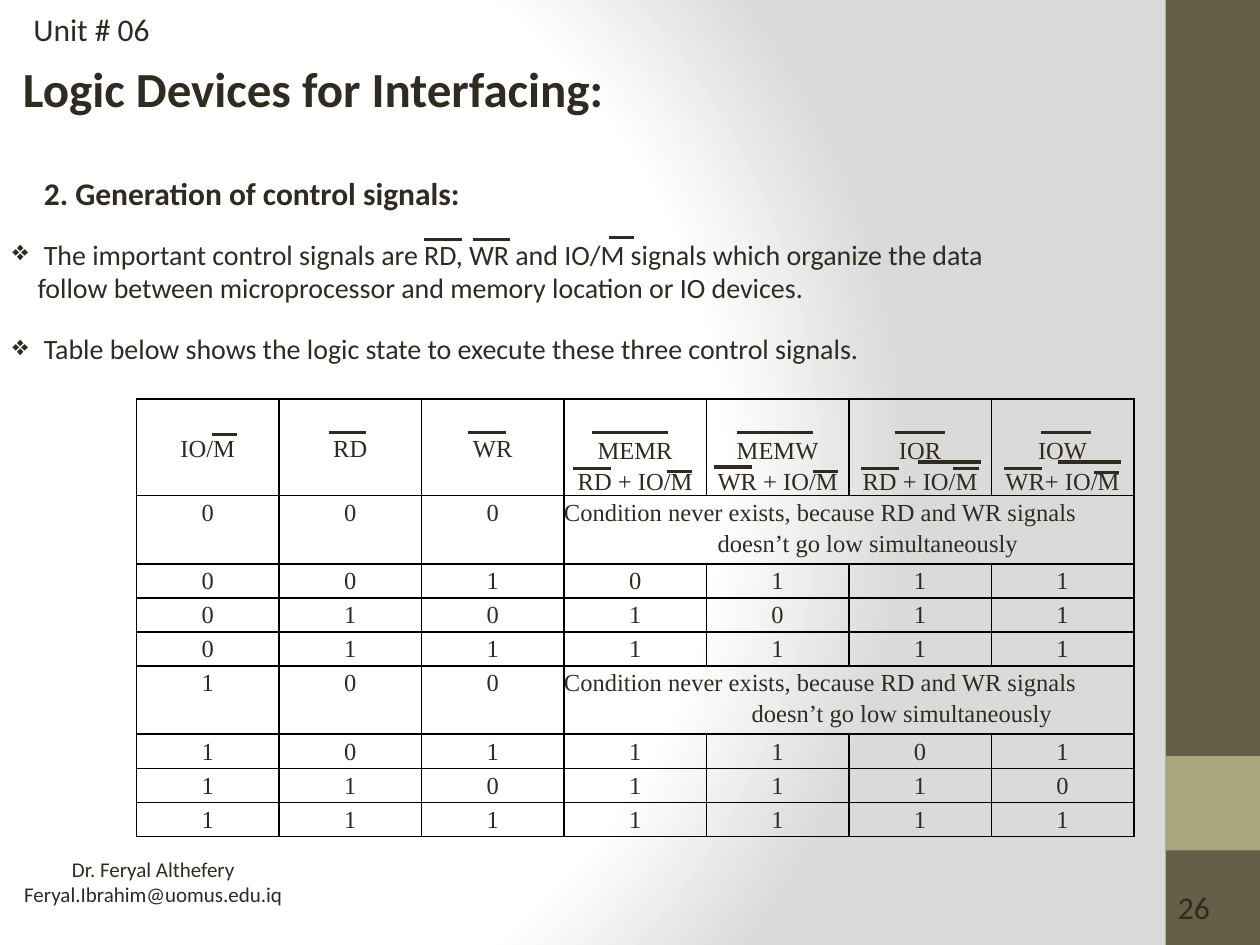
from lxml.etree import SubElement
from pptx import Presentation
from pptx.dml.color import RGBColor
from pptx.enum.shapes import MSO_CONNECTOR as Connector, MSO_SHAPE as Shape
from pptx.enum.text import MSO_ANCHOR as Anchor, PP_ALIGN as Align
from pptx.oxml import parse_xml
from pptx.oxml.ns import nsdecls, qn
from pptx.util import Inches, Pt

COLORS = {"ink": "2F2B20", "side": "675E47", "accent": "A9A57C",
          "border": "000000", "light": "FFFFFF", "shade": "DADADA"}
WIDTH, HEIGHT = Inches(10), Inches(7.5)
COLUMNS, ROWS = 120, 90

SIGNALS = ["IO/M", "RD", "WR", "MEMR\nRD + IO/M", "MEMW\nWR + IO/M",
           "IOR\nRD + IO/M", "IOW\nWR+ IO/M"]
LOGIC = ["000", "0010111", "0101011", "0111111",
         "100", "1011101", "1101110", "1111111"]
CONDITION = ["Condition never exists, because RD and WR signals",
             "doesn’t go low simultaneously"]
CONDITION_INDENTS = {1: 1.22, 5: 1.49}

OVERBARS = {
    2.4: [(58, 22.6), (20.2, 41.4), (63.5, 44.9), (77.4, 44.9), (90.8, 44.6), (104.2, 45)],
    3.6: [(40.4, 22.8), (45, 22.8), (31.3, 41.2), (44.6, 41.2),
          (54.6, 44.6), (68, 44.5), (82, 44.6), (95.6, 44.6)],
    4.8: [(85.2, 41.2), (99.1, 41.2)],
    6: [(87.4, 44), (100.8, 44)],
    7.2: [(56.4, 41.2), (70.2, 41.2)],
}


def across(columns):
    return round(WIDTH * columns / COLUMNS)


def down(rows):
    return round(HEIGHT * rows / ROWS)


def color(name):
    return RGBColor.from_string(COLORS[name])


def write_text(paragraph, text, size=14, font="Calibri", bold=False,
               align=Align.LEFT, spacing=None, indent=0, bullet=None):
    properties = paragraph._p.get_or_add_pPr()
    if indent:
        properties.set("marL", str(Inches(indent)))
    if bullet:
        properties.set("indent", str(-Inches(indent)))
        SubElement(properties, qn("a:buChar")).set("char", bullet)
    paragraph.alignment = align
    if spacing:
        paragraph.line_spacing = spacing
    run = paragraph.add_run()
    run.text = text
    run.font.name, run.font.size, run.font.bold = font, Pt(size), bold
    run.font.color.rgb = color("ink")


def next_paragraph(frame, index):
    return frame.add_paragraph() if index else frame.paragraphs[0]


def add_text(slide, box, lines, wrap=True, indents=(0,), bullet=None, **style):
    left, top, width, height = box
    frame = slide.shapes.add_textbox(across(left), down(top), across(width), down(height)).text_frame
    frame.word_wrap = wrap
    for index, line in enumerate(lines):
        write_text(next_paragraph(frame, index), line, indent=indents[index % len(indents)],
                   bullet=None if index else bullet, **style)


def add_panel(slide, top, height, fill):
    panel = slide.shapes.add_shape(Shape.RECTANGLE, across(111), down(top), across(9), down(height))
    panel.shadow.inherit = False
    panel.fill.solid()
    panel.fill.fore_color.rgb = color(fill)
    panel.line.fill.background()


def add_overbar(slide, left, top, length):
    bar = slide.shapes.add_connector(Connector.STRAIGHT, across(left), down(top),
                                     across(left + length), down(top))
    bar.line.color.rgb = color("ink")
    bar.line.width = Pt(2)
    SubElement(bar._element.spPr, qn("a:effectLst"))


def set_background(slide):
    slide.background.fill.gradient()
    gradient = next(slide.element.iter(qn("a:gradFill")))
    stops = "".join(
        f'<a:gs pos="{position}"><a:srgbClr val="{COLORS[name]}"/></a:gs>'
        for position, name in [(0, "light"), (75000, "light"), (100000, "shade")])
    gradient.getparent().replace(gradient, parse_xml(
        f'<a:gradFill {nsdecls("a")} rotWithShape="1"><a:gsLst>{stops}</a:gsLst><a:path path="circle">'
        '<a:fillToRect l="20000" t="50000" r="100000" b="50000"/></a:path></a:gradFill>'))


def format_cell(cell):
    cell.margin_left = cell.margin_right = cell.margin_top = cell.margin_bottom = 0
    cell.fill.background()
    properties = cell._tc.get_or_add_tcPr()
    for index, side in enumerate(["lnL", "lnR", "lnT", "lnB"]):
        properties.insert(index, parse_xml(
            f'<a:{side} {nsdecls("a")} w="{Pt(1)}"><a:solidFill>'
            f'<a:srgbClr val="{COLORS["border"]}"/></a:solidFill></a:{side}>'))


def write_cell(cell, lines, indents=(0,), **style):
    for index, line in enumerate(lines):
        write_text(next_paragraph(cell.text_frame, index), line, font="Times New Roman",
                   spacing=1.15, indent=indents[index % len(indents)], **style)


def add_logic_table(slide):
    heights = [9.2] + [6.5 if len(states) == 3 else 3.25 for states in LOGIC]
    frame = slide.shapes.add_table(len(heights), len(SIGNALS), across(13), down(38),
                                   across(95), down(sum(heights)))
    table = frame.table
    table.first_row = table.horz_banding = False
    for row, height in zip(table.rows, heights):
        row.height = down(height)
    for cell in table.iter_cells():
        format_cell(cell)
    for column, signal in enumerate(SIGNALS):
        cell = table.cell(0, column)
        lines = signal.split("\n")
        cell.vertical_anchor = Anchor.BOTTOM if len(lines) > 1 else Anchor.MIDDLE
        write_cell(cell, lines, align=Align.CENTER)
    for row, states in enumerate(LOGIC, 1):
        for column, state in enumerate(states):
            write_cell(table.cell(row, column), [state], align=Align.CENTER)
        if row in CONDITION_INDENTS:
            table.cell(row, 3).merge(table.cell(row, 6))
            write_cell(table.cell(row, 3), CONDITION, indents=(0, CONDITION_INDENTS[row]))


def main():
    presentation = Presentation()
    presentation.slide_width, presentation.slide_height = WIDTH, HEIGHT
    slide = presentation.slides.add_slide(presentation.slide_layouts[6])
    set_background(slide)
    add_panel(slide, 0, 90, "side")
    add_panel(slide, 72, 9, "accent")
    add_text(slide, (111, 84, 6, 4.8), ["26"], size=18)
    add_text(slide, (1, 81, 27.2, 6), ["Dr. Feryal Althefery", "Feryal.Ibrahim@uomus.edu.iq"],
             wrap=False, size=12, align=Align.CENTER)
    add_text(slide, (1, 5, 80, 6.8), ["Logic Devices for Interfacing:"], size=28, bold=True)
    add_text(slide, (3, 16, 61, 4.8), ["2. Generation of control signals:"], size=18, bold=True)
    add_text(slide, (0, 31, 114, 4.8),
             ["Table below shows the logic state to execute these three control signals."],
             size=16, indents=(0.25,), bullet="❖")
    add_text(slide, (0, 22, 114, 7.7),
             ["The important control signals are RD, WR and IO/M signals which organize the data",
              "follow between microprocessor and memory location or IO devices."],
             size=16, indents=(0.25, 0.2), bullet="❖")
    add_logic_table(slide)
    for length, places in OVERBARS.items():
        for left, top in places:
            add_overbar(slide, left, top, length)
    add_text(slide, (2, 0.4, 17, 4.8), ["Unit # 06"], size=18)
    presentation.save("out.pptx")


if __name__ == "__main__":
    main()
